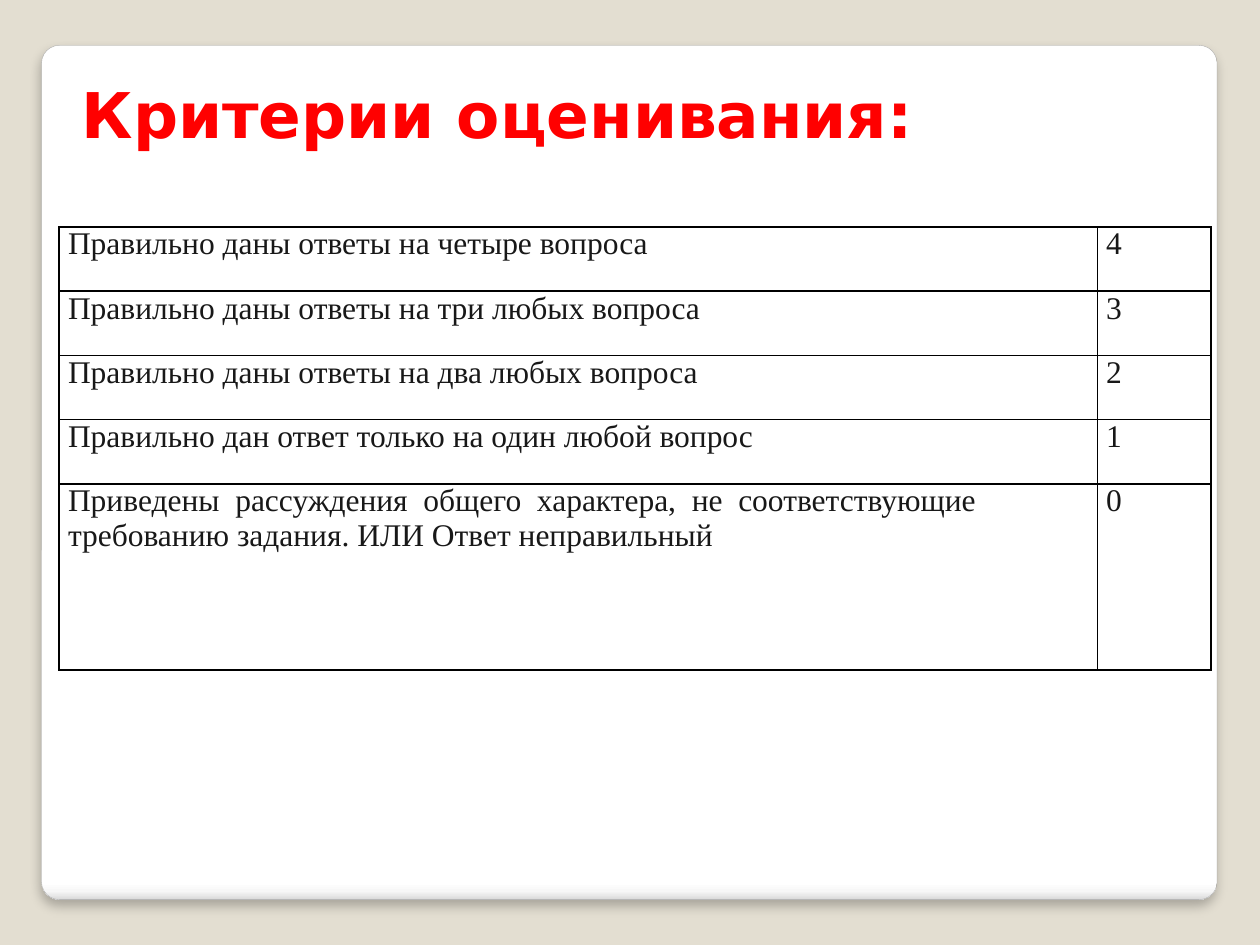
from lxml import etree
from pptx import Presentation
from pptx.dml.color import RGBColor
from pptx.enum.shapes import MSO_SHAPE
from pptx.enum.text import MSO_ANCHOR, MSO_AUTO_SIZE, PP_ALIGN
from pptx.oxml.ns import qn
from pptx.util import Inches, Pt

ROUNDED = MSO_SHAPE.ROUNDED_RECTANGLE
TOP = MSO_ANCHOR.TOP
LEFT, JUSTIFY = PP_ALIGN.LEFT, PP_ALIGN.JUSTIFY
NO_AUTOSIZE = MSO_AUTO_SIZE.NONE

COLORS = {
    "background": "E3DED1",
    "panel_line": "A4A4A4",
    "shadow": "000000",
    "border": "000000",
    "title": "FF0000",
    "text": "181818",
}
PANEL_STOPS = [(0, "FFFFFF"), (98, "FFFFFF"), (99, "F7F7F7"), (100, "DADADA")]

CRITERIA = [
    ("Правильно даны ответы на четыре вопроса", "4"),
    ("Правильно даны ответы на три любых вопроса", "3"),
    ("Правильно даны ответы на два любых вопроса", "2"),
    ("Правильно дан ответ только на один любой вопрос", "1"),
    ("Приведены рассуждения общего характера, не соответствующие "
     "требованию задания. ИЛИ Ответ неправильный", "0"),
]
COL_WIDTHS = [8.24, 0.9]
ROW_HEIGHTS = [0.51] * 4 + [1.48]
CELL_MARGIN = 0.07
JUSTIFIED_MARGIN = 0.96


def rgb(name):
    return RGBColor.from_string(COLORS[name])


def add_color(parent, hex_color):
    return etree.SubElement(parent, qn("a:srgbClr"), val=hex_color)


def add_run(p, text, font, size, color, bold=False):
    r = p.add_run()
    r.text = text
    r.font.name = font
    r.font.size = Pt(size)
    r.font.bold = bold
    r.font.color.rgb = rgb(color)


def set_gradient(shape, stops):
    """Fill the shape from top to bottom with (percent, hex) stops."""
    shape.fill.gradient()
    shape.fill.gradient_angle = 270
    stop_list = shape._element.spPr.find(".//" + qn("a:gsLst"))
    for stop in list(stop_list):
        stop_list.remove(stop)
    for percent, hex_color in stops:
        stop = etree.SubElement(stop_list, qn("a:gs"), pos=str(percent * 1000))
        add_color(stop, hex_color)


def set_shadow(shape, blur, distance, opacity):
    """Cast a shadow straight down; blur and distance in points."""
    shape.shadow.inherit = False
    effects = shape._element.spPr.find(qn("a:effectLst"))
    shadow = etree.SubElement(
        effects, qn("a:outerShdw"), blurRad=str(Pt(blur)),
        dist=str(Pt(distance)), dir="5400000", algn="t", rotWithShape="0")
    color = add_color(shadow, COLORS["shadow"])
    etree.SubElement(color, qn("a:alpha"), val=str(opacity * 1000))


def add_panel(s):
    panel = s.shapes.add_shape(
        ROUNDED, Inches(0.33), Inches(0.36), Inches(9.33), Inches(6.78))
    panel.adjustments[0] = 0.021
    set_gradient(panel, PANEL_STOPS)
    panel.line.color.rgb = rgb("panel_line")
    panel.line.width = Pt(0.16)
    set_shadow(panel, blur=6, distance=4, opacity=25)
    s.shapes.title._element.addprevious(panel._element)


def set_title(s, text):
    title = s.shapes.title
    title.left, title.top = Inches(0.55), Inches(0.55)
    title.width, title.height = Inches(8.91), Inches(0.71)
    tf = title.text_frame
    tf.word_wrap = True
    tf.auto_size = NO_AUTOSIZE
    tf.vertical_anchor = TOP
    p = tf.paragraphs[0]
    p.alignment = JUSTIFY
    add_run(p, text, "DejaVu Sans", 36, "title", bold=True)


def set_borders(cell, width):
    tc_pr = cell._tc.get_or_add_tcPr()
    for i, side in enumerate(("a:lnL", "a:lnR", "a:lnT", "a:lnB")):
        line = etree.Element(qn(side), w=str(Pt(width)))
        add_color(etree.SubElement(line, qn("a:solidFill")), COLORS["border"])
        tc_pr.insert(i, line)


def fill_cell(cell, text, justified=False):
    right = JUSTIFIED_MARGIN if justified else CELL_MARGIN
    cell.margin_left, cell.margin_right = Inches(CELL_MARGIN), Inches(right)
    cell.margin_top = cell.margin_bottom = 0
    cell.vertical_anchor = TOP
    cell.fill.background()
    set_borders(cell, 1)
    p = cell.text_frame.paragraphs[0]
    p.alignment = JUSTIFY if justified else LEFT
    add_run(p, text, "Times New Roman", 18, "text")


def add_criteria_table(s):
    table = s.shapes.add_table(
        len(CRITERIA), len(COL_WIDTHS), Inches(0.47), Inches(1.8),
        Inches(sum(COL_WIDTHS)), Inches(sum(ROW_HEIGHTS))).table
    table.first_row = table.horz_banding = False
    for column, width in zip(table.columns, COL_WIDTHS):
        column.width = Inches(width)
    for row, height, (criterion, score) in zip(table.rows, ROW_HEIGHTS, CRITERIA):
        row.height = Inches(height)
        fill_cell(row.cells[0], criterion, justified=score == "0")
        fill_cell(row.cells[1], score)


def main():
    prs = Presentation()
    prs.slide_width, prs.slide_height = Inches(10), Inches(7.5)
    s = prs.slides.add_slide(prs.slide_layouts[5])
    s.background.fill.solid()
    s.background.fill.fore_color.rgb = rgb("background")
    add_panel(s)
    set_title(s, "Критерии оценивания:")
    add_criteria_table(s)
    prs.save("out.pptx")


if __name__ == "__main__":
    main()
